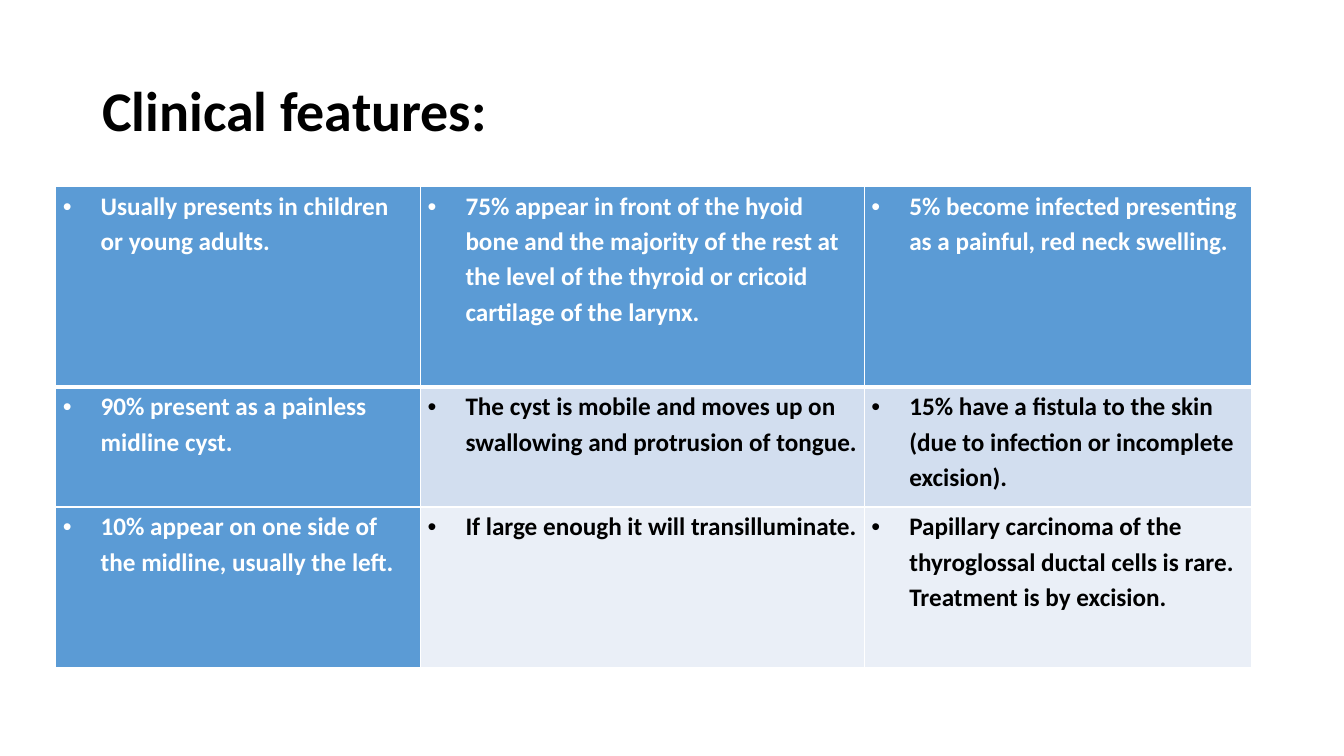
"""Build the slide on clinical features, a title above a three by three table."""
from dataclasses import dataclass

from lxml import etree
from pptx import Presentation
from pptx.dml.color import RGBColor
from pptx.enum.text import MSO_ANCHOR
from pptx.oxml.ns import qn
from pptx.util import Pt

MIDDLE = MSO_ANCHOR.MIDDLE

TITLE = "Clinical features:"
FEATURES = [
    [
        "Usually presents in children or young adults.",
        "75% appear in front of the hyoid bone and the majority of the rest "
        "at the level of the thyroid or cricoid cartilage of the larynx.",
        "5% become infected presenting as a painful, red neck swelling.",
    ],
    [
        "90% present as a painless midline cyst.",
        "The cyst is mobile and moves up on swallowing and protrusion of tongue.",
        "15% have a fistula to the skin (due to infection or incomplete excision).",
    ],
    [
        "10% appear on one side of the midline, usually the left.",
        "If large enough it will transilluminate.",
        "Papillary carcinoma of the thyroglossal ductal cells is rare. "
        "Treatment is by excision.",
    ],
]
SLIDE_SIZE = (960, 540)
TITLE_BOX = (66, 29, 828, 104)
TABLE_ORIGIN = (39.9, 133.2)
COLUMN_WIDTHS = (260.6, 317, 276.5)
ROW_HEIGHTS = (143.3, 85.7, 114.5)


@dataclass(frozen=True)
class Theme:
    font: str = "Calibri"
    title_size: int = 40
    body_size: int = 18
    black: str = "000000"
    white: str = "FFFFFF"
    header: str = "5B9BD5"
    bands: tuple = ("D2DEEF", "EAEFF7")
    thin: int = 1
    thick: int = 3
    indent: int = 27
    cell_margin: int = 5


THEME = Theme()


def style_font(paragraph, size, color):
    font = paragraph.font
    font.name = THEME.font
    font.size = Pt(size)
    font.bold = True
    font.color.rgb = RGBColor.from_string(color)


def add_title(slide):
    shape = slide.shapes.add_textbox(*map(Pt, TITLE_BOX))
    frame = shape.text_frame
    frame.word_wrap = True
    frame.vertical_anchor = MIDDLE
    paragraph = frame.paragraphs[0]
    paragraph.text = TITLE
    paragraph.line_spacing = 0.9
    style_font(paragraph, THEME.title_size, THEME.black)


def add_bullet(paragraph):
    properties = paragraph._p.get_or_add_pPr()
    properties.set("marL", str(Pt(THEME.indent)))
    properties.set("indent", str(-Pt(THEME.indent)))
    etree.SubElement(properties, qn("a:buFont"), typeface="Arial")
    etree.SubElement(properties, qn("a:buChar"), char="•")


def add_borders(cell, top, bottom):
    properties = cell._tc.get_or_add_tcPr()
    widths = {"lnL": THEME.thin, "lnR": THEME.thin, "lnT": top, "lnB": bottom}
    for side, width in widths.items():
        line = etree.SubElement(properties, qn(f"a:{side}"), w=str(Pt(width)))
        fill = etree.SubElement(line, qn("a:solidFill"))
        etree.SubElement(fill, qn("a:srgbClr"), val=THEME.white)


def fill_cell(cell, text, row, column):
    is_header = row == 0 or column == 0
    cell.margin_left = cell.margin_right = Pt(THEME.cell_margin)
    cell.margin_top = cell.margin_bottom = 0
    add_borders(
        cell,
        THEME.thick if row == 1 else THEME.thin,
        THEME.thick if row == 0 else THEME.thin,
    )
    cell.fill.solid()
    color = THEME.header if is_header else THEME.bands[row - 1]
    cell.fill.fore_color.rgb = RGBColor.from_string(color)
    paragraph = cell.text_frame.paragraphs[0]
    paragraph.text = text
    add_bullet(paragraph)
    paragraph.line_spacing = 1.15
    paragraph.space_after = Pt(10)
    style_font(paragraph, THEME.body_size, THEME.white if is_header else THEME.black)


def add_features(slide):
    size = (sum(COLUMN_WIDTHS), sum(ROW_HEIGHTS))
    table = slide.shapes.add_table(
        len(ROW_HEIGHTS), len(COLUMN_WIDTHS), *map(Pt, TABLE_ORIGIN + size)
    ).table
    table.first_col = True
    for column, width in zip(table.columns, COLUMN_WIDTHS):
        column.width = Pt(width)
    for row, height in zip(table.rows, ROW_HEIGHTS):
        row.height = Pt(height)
    for row, texts in enumerate(FEATURES):
        for column, text in enumerate(texts):
            fill_cell(table.cell(row, column), text, row, column)


def main():
    presentation = Presentation()
    presentation.slide_width, presentation.slide_height = map(Pt, SLIDE_SIZE)
    slide = presentation.slides.add_slide(presentation.slide_layouts[6])
    add_title(slide)
    add_features(slide)
    presentation.save("out.pptx")


if __name__ == "__main__":
    main()
